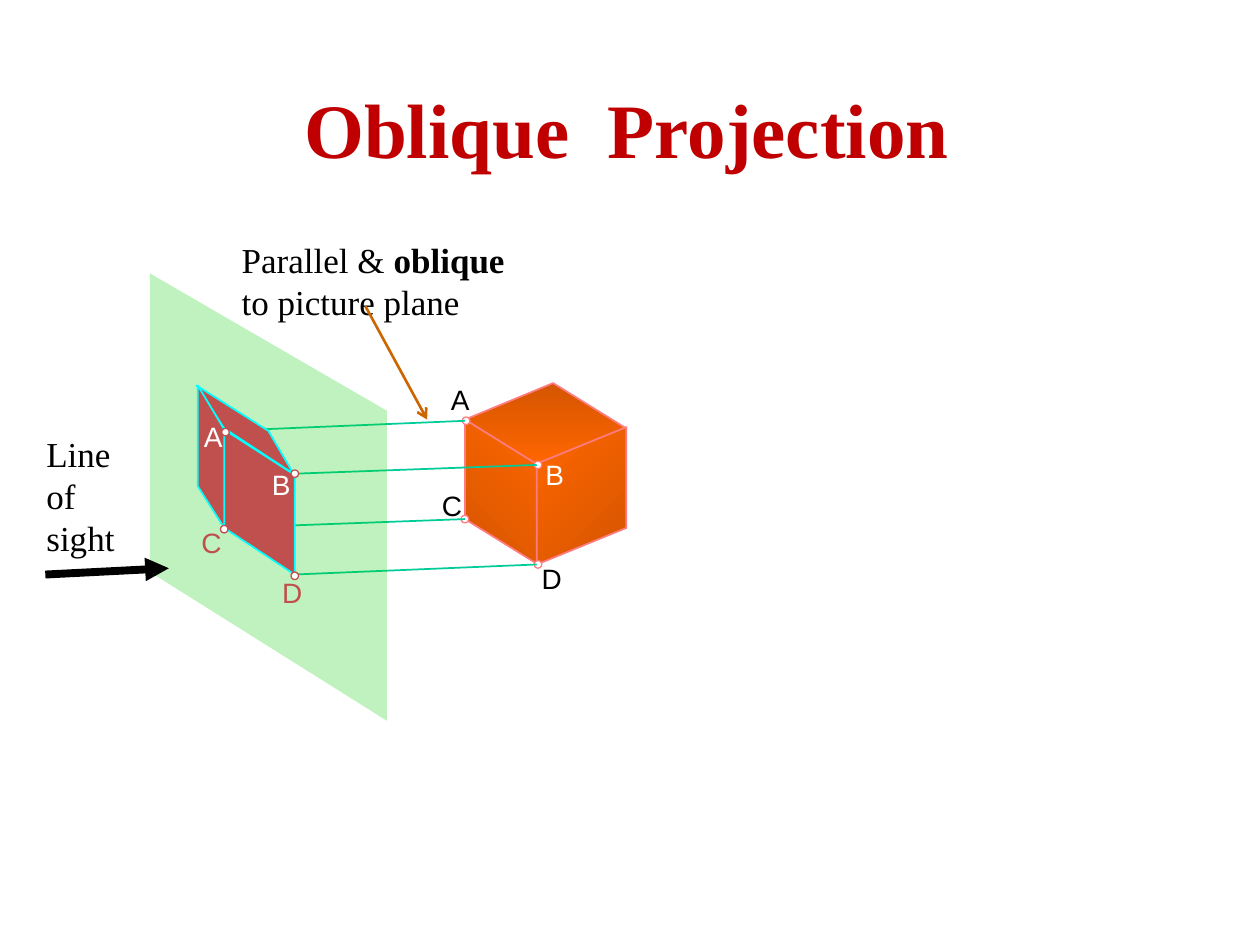
"""Build a slide that explains oblique projection of a cube onto a picture plane."""
from dataclasses import dataclass

from lxml.etree import SubElement
from pptx import Presentation
from pptx.dml.color import RGBColor
from pptx.enum.shapes import MSO_CONNECTOR as Connector, MSO_SHAPE as Shape
from pptx.enum.text import MSO_ANCHOR as Anchor, PP_ALIGN as Align
from pptx.oxml.ns import qn
from pptx.util import Inches, Pt


@dataclass(frozen=True)
class Theme:
    title: str = "C00000"
    ink: str = "000000"
    white: str = "FFFFFF"
    bright: str = "FF6600"
    dark: str = "D55500"
    cube_edge: str = "FF7C80"
    image: str = "C0504D"
    image_edge: str = "00FFFF"
    plane: str = "00CC00"
    ray: str = "00CC99"
    pointer: str = "CC6600"
    serif: str = "Times New Roman"
    sans: str = "Arial"
    title_size: int = 44
    caption_size: int = 20
    letter_size: int = 16


theme = Theme()
deck = Presentation()
deck.slide_width, deck.slide_height = Inches(10), Inches(7.5)
UNIT = deck.slide_width // 1000
DOT = 6
page = deck.slides.add_slide(deck.slide_layouts[5])


def draw_figure(faces, edge=None, dots=(), dot_edge=None):
    """Draw filled faces, then the corner dots, and return the last face."""
    for corners, colours, angle in faces:
        builder = page.shapes.build_freeform(*corners[0], scale=UNIT)
        builder.add_line_segments(corners[1:], close=True)
        face = builder.convert_to_shape()
        face.shadow.inherit = False
        if angle is None:
            face.fill.solid()
            face.fill.fore_color.rgb = RGBColor.from_string(colours[0])
        else:
            face.fill.gradient()
            face.fill.gradient_angle = angle
            for stop, colour in zip(face.fill.gradient_stops, colours):
                stop.color.rgb = RGBColor.from_string(colour)
        if edge:
            face.line.color.rgb = RGBColor.from_string(edge)
            face.line.width = Pt(1)
        else:
            face.line.fill.background()
    for left, top in dots:
        dot = page.shapes.add_shape(Shape.OVAL, left * UNIT, top * UNIT, DOT * UNIT, DOT * UNIT)
        dot.shadow.inherit = False
        dot.fill.solid()
        dot.fill.fore_color.rgb = RGBColor.from_string(theme.white)
        dot.line.color.rgb = RGBColor.from_string(dot_edge)
        dot.line.width = Pt(0.75)
    return face


def draw_line(start, end, colour, width, head=None):
    """Draw a straight line with an optional arrowhead at its end."""
    points = [value * UNIT for value in (*start, *end)]
    line = page.shapes.add_connector(Connector.STRAIGHT, *points)
    line.line.color.rgb = RGBColor.from_string(colour)
    line.line.width = Pt(width)
    properties = line.element.spPr
    if head:
        SubElement(properties.find(qn("a:ln")), qn("a:tailEnd"), type=head)
    SubElement(properties, qn("a:effectLst"))


title = page.shapes.title
place = {"left": 229, "top": 60, "width": 537, "height": 84}
for name, value in place.items():
    setattr(title, name, value * UNIT)
frame = title.text_frame
for name, value in {"word_wrap": False, "vertical_anchor": Anchor.TOP}.items():
    setattr(frame, name, value)
frame.text = "Oblique  Projection"
para = frame.paragraphs[0]
para.alignment = Align.CENTER
for name, value in {"name": theme.serif, "size": Pt(theme.title_size), "bold": True}.items():
    setattr(para.runs[0].font, name, value)
para.runs[0].font.color.rgb = RGBColor.from_string(theme.title)

shade = (theme.dark, theme.bright)
cube_faces = [
    ([(369, 333), (426, 369), (497, 340), (439, 304)], shade, 270),
    ([(369, 333), (369, 412), (427, 448), (427, 369)], shade, 45),
    ([(497, 419), (497, 339), (426, 368), (426, 448)], shade[::-1], 315),
]
cube_dots = [(424, 366), (424, 445), (366, 409), (367, 331)]
draw_figure(cube_faces, theme.cube_edge, cube_dots, theme.cube_edge)

rays = [
    ((426, 448), (233, 456)),
    ((426, 369), (233, 376)),
    ((369, 334), (178, 342)),
    ((369, 412), (178, 419)),
]
for start, end in rays:
    draw_line(start, end, theme.ray, 1)

plane_corners = [(119, 454), (119, 217), (307, 326), (307, 572)]
plane = draw_figure([(plane_corners, [theme.plane], None)])
plane_colour = plane.element.spPr.find(".//" + qn("a:srgbClr"))
SubElement(plane_colour, qn("a:alpha"), val="25000")

image_outlines = [
    [(234, 456), (234, 377), (178, 341), (178, 419)],
    [(178, 340), (156, 306), (213, 342), (233, 376)],
    [(178, 419), (157, 386), (157, 306), (178, 341)],
]
image_faces = [(corners, [theme.image], None) for corners in image_outlines]
image_dots = [(231, 373), (176, 340), (175, 417), (231, 454)]
draw_figure(image_faces, theme.image_edge, image_dots, theme.image)

letter = (theme.sans, theme.letter_size)
caption = (theme.serif, theme.caption_size)
letters = [
    ("A", 348, 299, theme.ink),
    ("B", 423, 358, theme.white),
    ("C", 341, 383, theme.ink),
    ("D", 420, 441, theme.ink),
    ("A", 152, 328, theme.white),
    ("B", 206, 366, theme.white),
    ("C", 150, 412, theme.image),
    ("D", 214, 452, theme.image),
]
texts = [((left, top, 36, 37), [[(word, False)]], letter, colour)
         for word, left, top, colour in letters]
texts += [
    ((27, 338, 74, 111), [[(word, False)] for word in ("Line", "of", "sight")], caption, theme.ink),
    ((182, 184, 230, 77),
     [[("Parallel & ", False), ("oblique", True)], [("to picture plane", False)]],
     caption, theme.ink),
]
for area, rows, (font, size), colour in texts:
    box = page.shapes.add_textbox(*[value * UNIT for value in area])
    frame = box.text_frame
    frame.word_wrap = False
    for index, row in enumerate(rows):
        para = frame.add_paragraph() if index else frame.paragraphs[0]
        for words, bold in row:
            span = para.add_run()
            span.text = words
            for name, value in {"name": font, "size": Pt(size), "bold": bold}.items():
                setattr(span.font, name, value)
            span.font.color.rgb = RGBColor.from_string(colour)

draw_line((36, 456), (134, 451), theme.ink, 4.5, "triangle")
draw_line((290, 243), (339, 333), theme.pointer, 1.5, "arrow")

deck.save("out.pptx")
